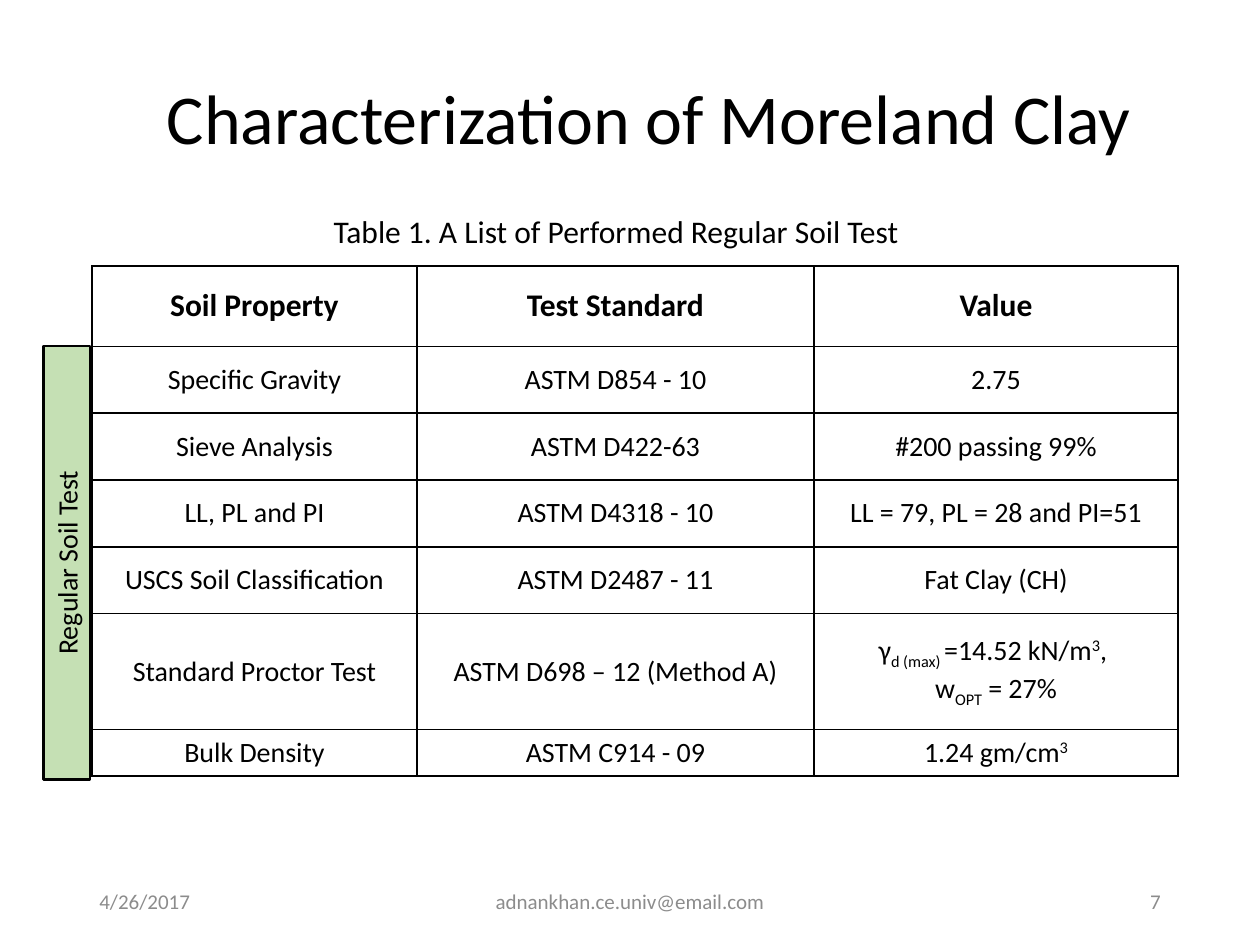
from pptx import Presentation
from pptx.dml.color import RGBColor
from pptx.enum.shapes import MSO_SHAPE
from pptx.enum.text import MSO_ANCHOR, PP_ALIGN
from pptx.oxml import parse_xml
from pptx.oxml.ns import nsdecls
from pptx.util import Inches, Pt

LEFT, CENTER, RIGHT = PP_ALIGN.LEFT, PP_ALIGN.CENTER, PP_ALIGN.RIGHT
TOP, MIDDLE = MSO_ANCHOR.TOP, MSO_ANCHOR.MIDDLE
RECTANGLE = MSO_SHAPE.RECTANGLE
SUB, SUPER = -25000, 30000
BLACK, GRAY, GREEN = "000000", "8C8C8C", "C5E0B4"

COLUMN_WIDTHS = [2.58, 3.15, 2.89]
ROW_HEIGHTS = [0.64] + [0.53] * 4 + [0.92, 0.37]
PROCTOR_VALUES = [
    [("γ", 0), ("d (max) ", SUB), ("=14.52 kN/m", 0), ("3", SUPER), (", ", 0)],
    [("w", 0), ("OPT", SUB), (" = 27%", 0)],
]
DENSITY_VALUE = [[("1.24 gm/cm", 0), ("3", SUPER)]]
SOIL_TESTS = [
    ["Soil Property", "Test Standard", "Value"],
    ["Specific Gravity", "ASTM D854 - 10", "2.75"],
    ["Sieve Analysis", "ASTM D422-63", "#200 passing 99%"],
    ["LL, PL and PI", "ASTM D4318 - 10", "LL = 79, PL = 28 and PI=51"],
    ["USCS Soil Classification", "ASTM D2487 - 11", "Fat Clay (CH)"],
    ["Standard Proctor Test", "ASTM D698 – 12 (Method A)", PROCTOR_VALUES],
    ["Bulk Density", "ASTM C914 - 09", DENSITY_VALUE],
]


def color(value):
    """Turn a hex string into a colour."""
    return RGBColor.from_string(value)


class SlideBuilder:
    """Hold the text style and the current slide, and add elements to it."""

    def __init__(self, page, font="Calibri"):
        """Keep the page and the font name."""
        self.page = page
        self.font = font

    def set_text(self, frame, content, size, align=CENTER, ink=BLACK, bold=False, spacing=None):
        """Fill a text frame with a string or with paragraphs of (text, baseline) spans."""
        paragraphs = [[(content, 0)]] if isinstance(content, str) else content
        formats = {"name": self.font, "size": Pt(size), "bold": bold}
        for index, spans in enumerate(paragraphs):
            para = frame.add_paragraph() if index else frame.paragraphs[0]
            para.alignment = align
            para.line_spacing = spacing
            for text, baseline in spans:
                span = para.add_run()
                span.text = text
                for name, value in formats.items():
                    setattr(span.font, name, value)
                span.font.color.rgb = color(ink)
                if baseline:
                    span.font._element.set("baseline", str(baseline))

    def text(self, bounds, content, size, anchor=MIDDLE, **style):
        """Add a wrapped text box."""
        box = self.page.shapes.add_textbox(*map(Inches, bounds))
        box.text_frame.word_wrap = True
        box.text_frame.vertical_anchor = anchor
        self.set_text(box.text_frame, content, size, **style)

    def side_label(self, bounds, content, size, fill):
        """Add a filled, outlined label that reads upwards."""
        box = self.page.shapes.add_shape(RECTANGLE, *map(Inches, bounds))
        box.shadow.inherit = False
        box.rotation = 270
        box.fill.solid()
        box.fill.fore_color.rgb = color(fill)
        box.line.color.rgb = color(BLACK)
        box.line.width = Pt(1.5)
        box.text_frame.word_wrap = True
        box.text_frame.vertical_anchor = TOP
        self.set_text(box.text_frame, content, size)

    def border(self, cell, ink=BLACK, width=1):
        """Draw a line on all four sides of a cell."""
        properties = cell._tc.get_or_add_tcPr()
        for side in ("lnL", "lnR", "lnT", "lnB"):
            properties.append(parse_xml(
                f'<a:{side} {nsdecls("a")} w="{Pt(width)}"><a:solidFill>'
                f'<a:srgbClr val="{ink}"/></a:solidFill></a:{side}>'))

    def table(self, left, top, widths, heights, rows):
        """Add a bordered, unfilled table with a bold first row."""
        bounds = map(Inches, (left, top, sum(widths), sum(heights)))
        table = self.page.shapes.add_table(len(heights), len(widths), *bounds).table
        table.horz_banding = False
        for column, width in zip(table.columns, widths):
            column.width = Inches(width)
        for index, (row, height, values) in enumerate(zip(table.rows, heights, rows)):
            row.height = Inches(height)
            header = index == 0
            for cell, value in zip(row.cells, values):
                self.border(cell)
                cell.fill.background()
                cell.vertical_anchor = MIDDLE
                self.set_text(cell.text_frame, value, 18 if header else 16, bold=header)


def main():
    """Build the soil test slide and save it."""
    deck = Presentation()
    deck.slide_width, deck.slide_height = Inches(10), Inches(7.5)
    builder = SlideBuilder(deck.slides.add_slide(deck.slide_layouts[6]))

    builder.text((0.98, 0.4, 8.34, 1.13), "Characterization of Moreland Clay", 40, spacing=0.9)
    builder.table(0.73, 2.11, COLUMN_WIDTHS, ROW_HEIGHTS, SOIL_TESTS)
    builder.text((0.72, 1.63, 8.34, 0.4), "Table 1. A List of Performed Regular Soil Test", 18, TOP)
    builder.side_label((-1.19, 4.28, 3.44, 0.37), "Regular Soil Test", 16, GREEN)

    footers = [
        (0.69, 2.25, "4/26/2017", LEFT),
        (3.31, 3.38, "adnankhan.ce.univ@email.com", CENTER),
        (7.06, 2.25, "7", RIGHT),
    ]
    for left, width, content, align in footers:
        builder.text((left, 6.95, width, 0.4), content, 12, align=align, ink=GRAY)

    deck.save("out.pptx")


if __name__ == "__main__":
    main()
